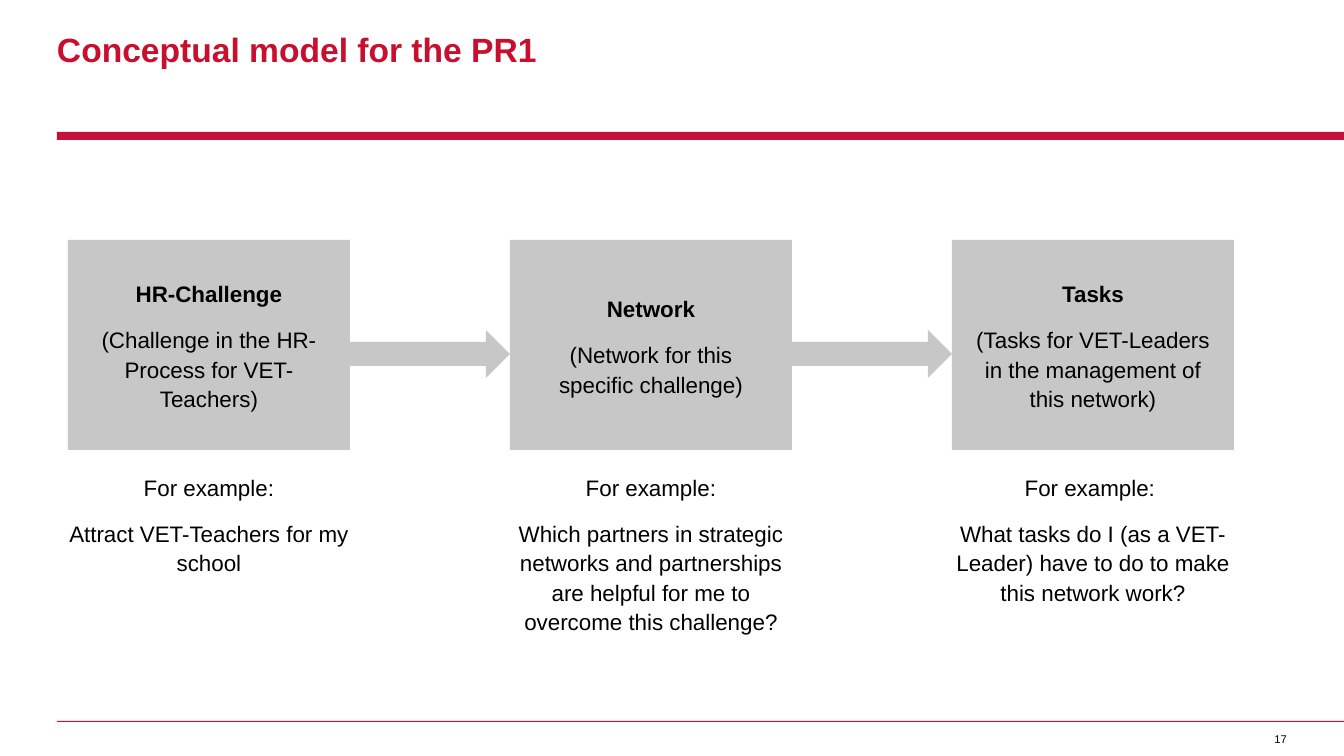
import pptx
import pptx.dml.color
import pptx.enum.shapes
import pptx.enum.text
import pptx.util

Align = pptx.enum.text.PP_ALIGN
Anchor = pptx.enum.text.MSO_ANCHOR
Shape = pptx.enum.shapes.MSO_SHAPE

SCALE = 914400 / 100.8  # EMU in one px
HUES = {"bar": "C50F3C", "title": "C80F2E", "box": "C7C7C7", "text": "000000"}


def px(n):
    return pptx.util.Emu(round(n * SCALE))


def hue(name):
    return pptx.dml.color.RGBColor.from_string(HUES[name])


def write(frame, *lines, size=16, color="text", bold=(), align=Align.CENTER,
          anchor=Anchor.TOP, inset=0, lead=1.1, after=12, wrap=True):
    """Fill a frame with one paragraph a line; bold holds line indexes."""
    frame.word_wrap = wrap
    frame.vertical_anchor = anchor
    frame.margin_left = frame.margin_right = px(inset)
    frame.margin_top = frame.margin_bottom = px(inset)
    for i, line in enumerate(lines):
        para = frame.add_paragraph() if i else frame.paragraphs[0]
        para.alignment = align
        para.line_spacing = lead
        para.space_after = pptx.util.Pt(after)
        run = para.add_run()
        run.text = line
        run.font.name = "Arial"
        run.font.size = pptx.util.Pt(size)
        run.font.bold = i in bold
        run.font.color.rgb = hue(color)


class Deck:
    def __init__(self, wide, high):
        self.file = pptx.Presentation()
        self.file.slide_width, self.file.slide_height = px(wide), px(high)
        self.slide = self.file.slides.add_slide(self.file.slide_layouts[6])

    def block(self, kind, *area, color):
        item = self.slide.shapes.add_shape(kind, *map(px, area))
        item.shadow.inherit = False
        item.fill.solid()
        item.fill.fore_color.rgb = hue(color)
        item.line.fill.background()
        return item

    def text(self, *lines, area, **style):
        item = self.slide.shapes.add_textbox(*map(px, area))
        write(item.text_frame, *lines, **style)


STEPS = [
    ("HR-Challenge", "(Challenge in the HR-Process for VET-Teachers)",
     "For example:", "Attract VET-Teachers for my school"),
    ("Network", "(Network for this specific challenge)",
     "For example:", "Which partners in strategic networks and partnerships "
     "are helpful for me to overcome this challenge?"),
    ("Tasks", "(Tasks for VET-Leaders in the management of this network)",
     "For example: ", "What tasks do I (as a VET-Leader) have to do to make "
     "this network work?"),
]
LEFT, TOP, WIDE, HIGH, GAP = 68, 240, 282, 210, 160


def main():
    deck = Deck(1344, 756)

    # Rules, title and page number
    for y, thick in ((132, 8), (721, 1)):
        deck.block(Shape.RECTANGLE, 57, y, 1287, thick, color="bar")
    deck.text("Conceptual model for the PR1", area=(57, 33, 755, 36), size=24,
              color="title", bold=(0,), align=Align.LEFT, lead=0.9, after=0)
    deck.text("17", area=(1266, 732, 21, 13), size=8, align=Align.RIGHT,
              lead=1.0, after=0, wrap=False)

    # Steps with their examples, joined by arrows
    for i, (head, note, intro, case) in enumerate(STEPS):
        x = LEFT + i * (WIDE + GAP)
        box = deck.block(Shape.RECTANGLE, x, TOP, WIDE, HIGH, color="box")
        write(box.text_frame, head, note, bold=(0,), anchor=Anchor.MIDDLE,
              inset=20)
        deck.text(intro, case, area=(x, 471, WIDE, 164))
        if i:
            deck.block(Shape.RIGHT_ARROW, x - GAP, 330, GAP, 48, color="box")

    deck.file.save("out.pptx")


if __name__ == "__main__":
    main()
